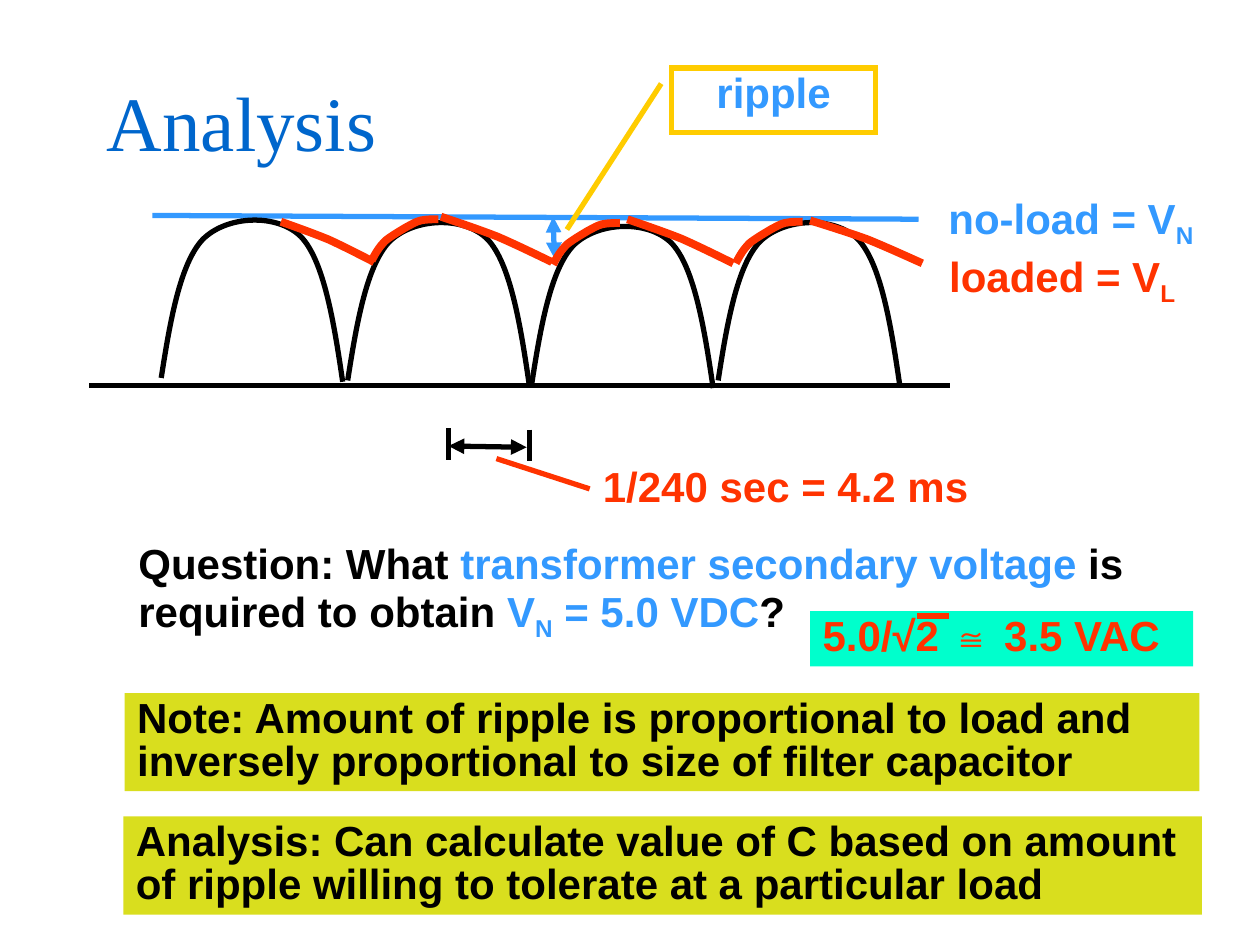
from lxml.etree import SubElement
from pptx import Presentation
from pptx.dml.color import RGBColor
from pptx.enum.shapes import MSO_CONNECTOR, MSO_SHAPE
from pptx.enum.text import MSO_ANCHOR, MSO_AUTO_SIZE, PP_ALIGN
from pptx.oxml.ns import qn
from pptx.util import Inches, Pt

BLACK, BLUE, RED = "000000", "3399FF", "FF3300"
YELLOW, OLIVE, AQUA, TITLE_BLUE = "FFCC00", "D9DE1E", "00FFCC", "0066CC"
LEFT, CENTER = PP_ALIGN.LEFT, PP_ALIGN.CENTER

# Content: lines as (from, to, colour, arrows at both ends)
LINES = [
    ((0.71, 3.06), (7.54, 3.06), BLACK, False),   # time axis
    ((3.56, 3.4), (3.56, 3.65), BLACK, False),    # interval marks
    ((4.2, 3.41), (4.2, 3.66), BLACK, False),
    ((3.56, 3.54), (4.18, 3.55), BLACK, True),    # interval
    ((4.39, 1.72), (4.4, 2.05), BLUE, True),      # ripple height
    ((1.21, 1.71), (7.29, 1.74), BLUE, False),    # no-load level
    ((3.94, 3.64), (4.68, 3.88), RED, False),     # interval leader
]
ROOT_BAR = ((7.28, 4.89), (7.53, 4.89), RED, False)

# Text: (left, top, width, height), fill, alignment, spans of (text, colour, subscript)
TEXTS = [
    ((4.52, 3.67, 3.43, 0.44), None, CENTER, [("1/240 sec = 4.2 ms", RED, False)]),
    ((7.32, 1.96, 2.22, 0.44), None, CENTER,
     [("loaded = V", RED, False), ("L", RED, True)]),
    ((7.3, 1.5, 2.4, 0.44), None, CENTER,
     [("no-load = V", BLUE, False), ("N", BLUE, True)]),
    ((0.99, 5.5, 8.53, 0.78), OLIVE, LEFT,
     [("Note: Amount of ripple is proportional to load and inversely "
       "proportional to size of filter capacitor", BLACK, False)]),
    ((0.98, 6.48, 8.56, 0.78), OLIVE, LEFT,
     [("Analysis: Can calculate value of C based on amount of ripple "
       "willing to tolerate at a particular load", BLACK, False)]),
    ((1, 4.28, 8.51, 0.78), None, LEFT,
     [("Question: What ", BLACK, False),
      ("transformer secondary voltage", BLUE, False),
      (" is required to obtain ", BLACK, False),
      ("V", BLUE, False), ("N", BLUE, True), (" = 5.0 VDC", BLUE, False),
      ("?", BLACK, False)]),
    ((6.43, 4.85, 3.04, 0.44), AQUA, LEFT, [("5.0/√2 ≅ 3.5 VAC", RED, False)]),
]
RIPPLE_BOX = (5.33, 0.54, 1.62, 0.51)
RIPPLE_LEADER = (0.243, -0.051, 2.514, -0.513)

# Waveform: Bezier control points relative to each curve's start
ARCH = [(0, 0), (0.07, -0.45), (0.15, -0.91), (0.33, -1.1), (0.52, -1.29),
        (0.92, -1.31), (1.11, -1.12), (1.29, -0.93), (1.37, -0.45), (1.44, 0.03)]
CHARGE = [(0, 0), (0.03, -0.06), (0.06, -0.11), (0.11, -0.16), (0.16, -0.2),
          (0.23, -0.24), (0.28, -0.27), (0.32, -0.29), (0.35, -0.31),
          (0.39, -0.32), (0.43, -0.33), (0.5, -0.33), (0.53, -0.33)]
DISCHARGE = [(0, 0), (0.17, 0.14), (0.34, 0.28), (0.51, 0.44),
             (0.67, 0.61), (0.83, 0.8), (1, 1)]
# (control points, colour, line width, starts, (x scale, y scale) of each start)
CURVES = [
    (ARCH, BLACK, 3, [(1.28, 3), (2.76, 3.02), (4.22, 3.05), (5.7, 3.02)], [(1, 1)] * 4),
    (DISCHARGE, RED, 4.5, [(2.23, 1.76), (3.5, 1.72), (4.98, 1.74), (6.43, 1.75)],
     [(0.74, 0.32), (0.88, 0.36), (0.84, 0.35), (0.89, 0.34)]),
    (CHARGE, RED, 4.5, [(2.95, 2.07), (4.39, 2.1), (5.84, 2.09)], [(1, 1)] * 3),
]

deck = Presentation()
deck.slide_width, deck.slide_height = Inches(10), Inches(7.5)
page = deck.slides.add_slide(deck.slide_layouts[6])


def color(value):
    return RGBColor.from_string(value)


def set_line(shape, value, width):
    shape.line.color.rgb = color(value)
    shape.line.width = Pt(width)


def add_line(start, end, value, arrows):
    line = page.shapes.add_connector(
        MSO_CONNECTOR.STRAIGHT, *map(Inches, start + end))
    set_line(line, value, 3)
    if arrows:
        outline = line.line._get_or_add_ln()
        for tag in ("a:headEnd", "a:tailEnd"):
            SubElement(outline, qn(tag)).set("type", "triangle")
    SubElement(line._element.spPr, qn("a:effectLst"))


def write(box, spans, align, size=24, name="Arial", bold=True, spacing=0.85,
          anchor=MSO_ANCHOR.TOP, fit=MSO_AUTO_SIZE.SHAPE_TO_FIT_TEXT):
    frame = box.text_frame
    frame_format = {"word_wrap": True, "vertical_anchor": anchor, "auto_size": fit}
    for key, value in frame_format.items():
        setattr(frame, key, value)
    para = frame.paragraphs[0]
    para.alignment, para.line_spacing = align, spacing
    for text, value, subscript in spans:
        span = para.add_run()
        span.text = text
        for key, setting in {"size": Pt(size), "name": name, "bold": bold}.items():
            setattr(span.font, key, setting)
        span.font.color.rgb = color(value)
        if subscript:
            span.font._element.set("baseline", "-25000")


def add_box(kind, place, fill):
    box = page.shapes.add_shape(kind, *map(Inches, place))
    box.shadow.inherit = False
    if fill:
        box.fill.solid()
        box.fill.fore_color.rgb = color(fill)
    else:
        box.fill.background()
    box.line.fill.background()
    return box


def add_curve(controls, start, scale, value, width):
    points = [tuple(Inches(start[axis] + point[axis] * scale[axis]) for axis in (0, 1))
              for point in controls]
    builder = page.shapes.build_freeform(*points[0])
    builder.add_line_segments(points[1:], close=False)
    curve = builder.convert_to_shape()
    # Join every three points into one Bezier segment
    segments = list(curve._element.iter(qn("a:lnTo")))
    for first in range(0, len(segments), 3):
        bezier = SubElement(segments[first].getparent(), qn("a:cubicBezTo"))
        for segment in segments[first:first + 3]:
            bezier.append(segment[0])
            segment.getparent().remove(segment)
    curve.shadow.inherit = False
    curve.fill.background()
    set_line(curve, value, width)


# Title
title = page.shapes.add_textbox(*map(Inches, (0.75, 0.33, 8.5, 1.25)))
write(title, [("Analysis", TITLE_BLUE, False)], LEFT, 44, "Times New Roman",
      False, 1.0, MSO_ANCHOR.MIDDLE, MSO_AUTO_SIZE.NONE)

# Axis, levels and markers
for line_data in LINES:
    add_line(*line_data)

# Ripple callout
callout = add_box(MSO_SHAPE.LINE_CALLOUT_1, RIPPLE_BOX, None)
set_line(callout, YELLOW, 3)
SubElement(callout.line._get_or_add_ln(), qn("a:miter")).set("lim", "800000")
for index, amount in enumerate(RIPPLE_LEADER):
    callout.adjustments[index] = amount
write(callout, [("ripple", BLUE, False)], CENTER, fit=MSO_AUTO_SIZE.NONE)

# Labels and notes
for place, fill, align, spans in TEXTS:
    if fill:
        text_box = add_box(MSO_SHAPE.RECTANGLE, place, fill)
    else:
        text_box = page.shapes.add_textbox(*map(Inches, place))
    write(text_box, spans, align)
add_line(*ROOT_BAR)

# Rectified and loaded waveforms
for controls, value, width, starts, scales in CURVES:
    for start, scale in zip(starts, scales):
        add_curve(controls, start, scale, value, width)

deck.save("out.pptx")
